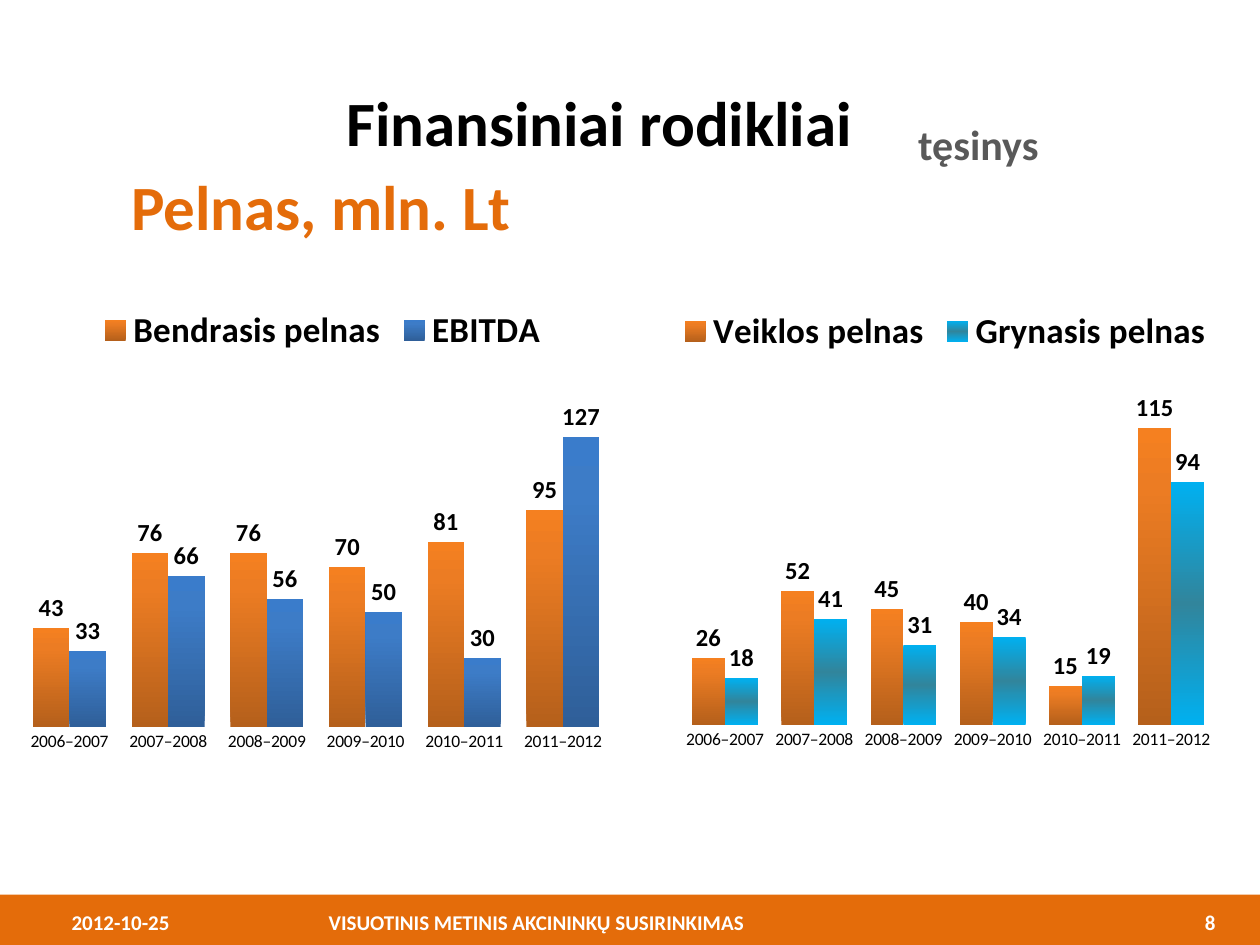
from dataclasses import dataclass

from lxml.etree import SubElement
from pptx import Presentation
from pptx.chart.data import CategoryChartData
from pptx.dml.color import RGBColor
from pptx.enum.chart import XL_CHART_TYPE as ChartType
from pptx.enum.chart import XL_LABEL_POSITION as LabelPosition
from pptx.enum.chart import XL_LEGEND_POSITION as LegendPosition
from pptx.enum.chart import XL_TICK_MARK as TickMark
from pptx.enum.shapes import MSO_SHAPE as ShapeKind
from pptx.enum.text import MSO_ANCHOR as Anchor
from pptx.enum.text import PP_ALIGN as Align
from pptx.oxml.ns import qn
from pptx.util import Inches, Pt

COLUMNS, ROWS, CELL = 100, 75, 0.1
FONT = "Calibri"
ORANGE, BLACK, GREY, WHITE = "E46C0A", "000000", "595959", "FFFFFF"
YEARS = [f"{year}–{year + 1}" for year in range(2006, 2012)]
AXIS_MAXIMUM = 140


@dataclass(frozen=True)
class Region:
    """A rectangle in grid columns and rows."""

    column: float
    row: float
    columns: float
    rows: float

    def lengths(self) -> list:
        """Return left, top, width and height."""
        return [grid(n) for n in (self.column, self.row, self.columns, self.rows)]


@dataclass(frozen=True)
class Label:
    """One line of bold text, with its indent and tab stops in columns."""

    text: str
    region: Region
    size: int
    color: str
    align: Align = Align.LEFT
    anchor: Anchor = Anchor.MIDDLE
    indent: float = 0
    tabs: tuple = ()


@dataclass(frozen=True)
class Gradient:
    """Colour stops in percent and an angle in degrees."""

    stops: tuple
    angle: int


@dataclass(frozen=True)
class Profit:
    """A named series of yearly values."""

    name: str
    values: tuple
    gradient: Gradient


@dataclass(frozen=True)
class ProfitChart:
    """A chart with its plot area in shares of the chart."""

    region: Region
    plot: tuple
    profits: tuple


ORANGE_FADE = Gradient(((0, "B5601B"), (80, "EC7C23"), (100, "F58020")), 270)
BLUE_FADE = Gradient(((0, "2F5F99"), (80, "3D7CC7"), (100, "3A7CCB")), 270)
CYAN_FADE = Gradient(((0, "00B0F0"), (50, "31859C"), (100, "00B0F0")), 90)

LABELS = (
    Label("2012-10-25\tVISUOTINIS METINIS AKCININKŲ SUSIRINKIMAS\t8",
          Region(4.7, 71.2, 94, 4), 12, WHITE, tabs=((20.4, "l"), (90.8, "r"))),
    Label("Finansiniai rodikliai", Region(0, 6.3, 99.9, 6.7), 36, BLACK, indent=26.5),
    Label("tęsinys", Region(68.7, 8.9, 17.9, 5), 24, GREY, Align.CENTER, Anchor.TOP),
    Label("Pelnas, mln. Lt", Region(6.5, 11.6, 37.9, 9.4), 36, ORANGE, Align.CENTER),
)
CHARTS = (
    ProfitChart(Region(0.6, 23.2, 50, 37.9), (0.02, 0.24, 0.94, 0.67), (
        Profit("Bendrasis pelnas", (43, 76, 76, 70, 81, 95), ORANGE_FADE),
        Profit("EBITDA", (33, 66, 56, 50, 30, 127), BLUE_FADE))),
    ProfitChart(Region(50, 23.3, 50, 39.8), (0.08, 0.14, 0.85, 0.72), (
        Profit("Veiklos pelnas", (26, 52, 45, 40, 15, 115), ORANGE_FADE),
        Profit("Grynasis pelnas", (18, 41, 31, 34, 19, 94), CYAN_FADE))),
)


def grid(cells: float) -> Inches:
    """Turn grid cells into a length."""
    return Inches(cells * CELL)


def rgb(color: str) -> RGBColor:
    """Turn a hex string into a colour."""
    return RGBColor.from_string(color)


def style_font(font, size: int, color: str = BLACK, bold: bool = False) -> None:
    """Set face, size, colour and weight."""
    font.name, font.size, font.bold = FONT, Pt(size), bold
    font.color.rgb = rgb(color)


def draw_band(page, region: Region, color: str) -> None:
    """Draw a plain filled rectangle."""
    band = page.shapes.add_shape(ShapeKind.RECTANGLE, *region.lengths())
    band.shadow.inherit = False
    band.fill.solid()
    band.fill.fore_color.rgb = rgb(color)
    band.line.fill.background()


def draw_label(page, label: Label) -> None:
    """Draw one line of text."""
    frame = page.shapes.add_textbox(*label.region.lengths()).text_frame
    frame.word_wrap, frame.vertical_anchor = True, label.anchor
    para = frame.paragraphs[0]
    para.add_run().text = label.text
    para.alignment = label.align
    props = para._p.get_or_add_pPr()
    if label.indent:
        props.set("marL", str(grid(label.indent)))
        props.set("indent", "0")
    if label.tabs:
        stops = SubElement(props, qn("a:tabLst"))
        for column, side in label.tabs:
            SubElement(stops, qn("a:tab"), pos=str(grid(column)), algn=side)
    style_font(para.font, label.size, label.color, True)


def fill_gradient(fill, gradient: Gradient) -> None:
    """Fill with a linear gradient of any number of stops."""
    fill.gradient()
    stops = fill._fill._gradFill.find(qn("a:gsLst"))
    for stop in list(stops):
        stops.remove(stop)
    for percent, color in gradient.stops:
        stop = SubElement(stops, qn("a:gs"), pos=str(percent * 1000))
        SubElement(stop, qn("a:srgbClr"), val=color)
    fill.gradient_angle = 360 - gradient.angle


def place_plot(chart, shares: tuple) -> None:
    """Fix the inner plot area within the chart."""
    area = chart._chartSpace.chart.plotArea
    for old in area.findall(qn("c:layout")):
        area.remove(old)
    layout = SubElement(area, qn("c:layout"))
    area.insert(0, layout)
    manual = SubElement(layout, qn("c:manualLayout"))
    settings = [("layoutTarget", "inner"), ("xMode", "edge"), ("yMode", "edge")]
    for tag, value in settings + list(zip("xywh", shares)):
        SubElement(manual, qn(f"c:{tag}"), val=str(value))


def draw_chart(page, item: ProfitChart) -> None:
    """Draw a clustered column chart of profits by year."""
    data = CategoryChartData(number_format="#,##0")
    data.categories = YEARS
    for profit in item.profits:
        data.add_series(profit.name, profit.values)
    chart = page.shapes.add_chart(
        ChartType.COLUMN_CLUSTERED, *item.region.lengths(), data).chart
    style_font(chart.font, 10)
    chart.has_title = False
    chart.has_legend = True
    chart.legend.position = LegendPosition.TOP
    chart.legend.include_in_layout = False
    style_font(chart.legend.font, 20, bold=True)
    chart.category_axis.major_tick_mark = TickMark.NONE
    chart.category_axis.format.line.fill.background()
    scale = chart.value_axis
    scale.visible = scale.has_major_gridlines = False
    scale.minimum_scale, scale.maximum_scale = 0, AXIS_MAXIMUM
    plot = chart.plots[0]
    plot.gap_width, plot.overlap, plot.vary_by_categories = 71, 0, False
    for series, profit in zip(plot.series, item.profits):
        fill_gradient(series.format.fill, profit.gradient)
        labels = series.data_labels
        labels.show_value, labels.position = True, LabelPosition.OUTSIDE_END
        labels.number_format, labels.number_format_is_linked = "#,##0", False
        style_font(labels.font, 14, bold=True)
    place_plot(chart, item.plot)


def main() -> None:
    """Build the profit slide."""
    deck = Presentation()
    deck.slide_width, deck.slide_height = grid(COLUMNS), grid(ROWS)
    page = deck.slides.add_slide(deck.slide_layouts[6])
    draw_band(page, Region(0, 71, COLUMNS, 4), ORANGE)
    for label in LABELS:
        draw_label(page, label)
    for item in CHARTS:
        draw_chart(page, item)
    deck.save("out.pptx")


if __name__ == "__main__":
    main()
